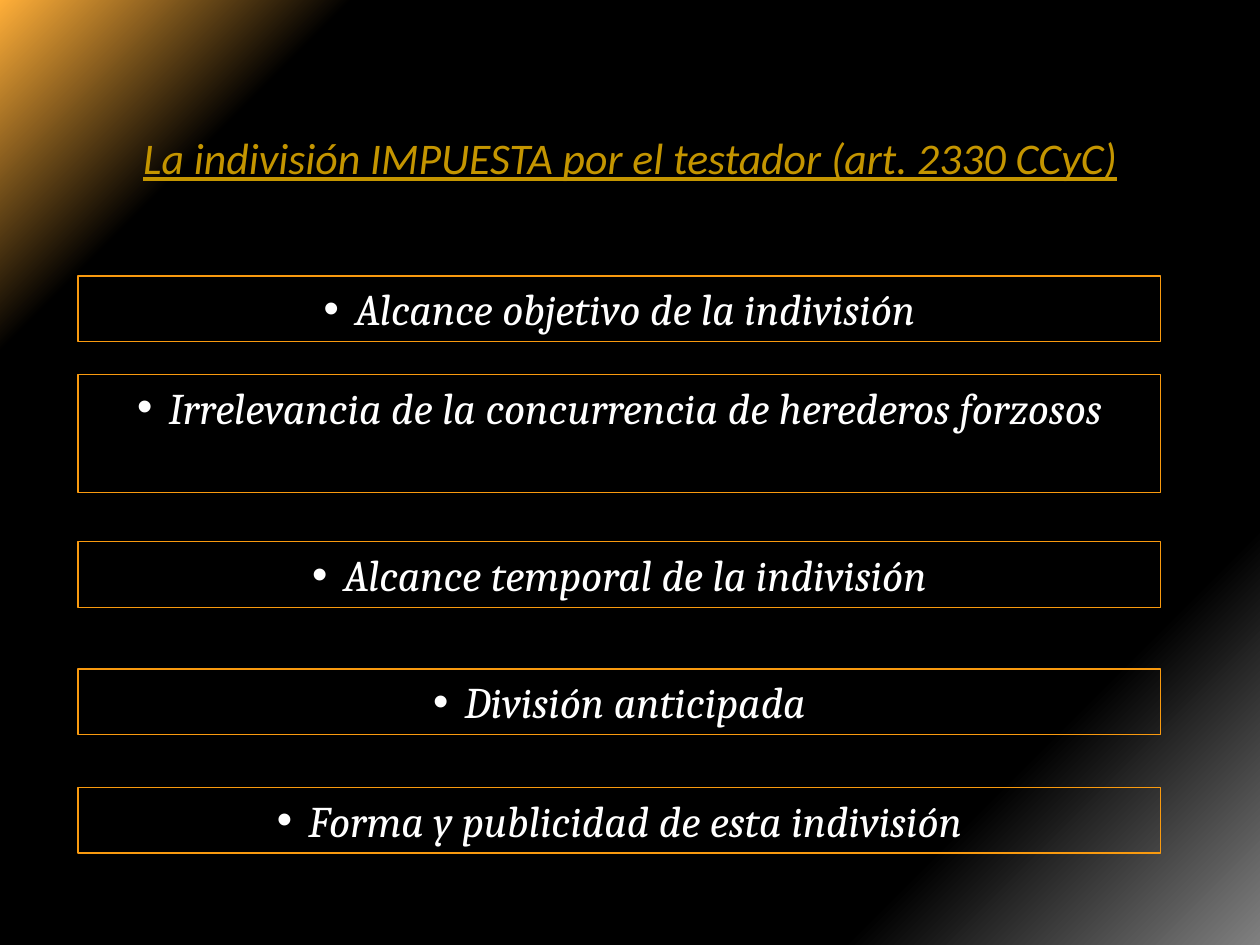
from dataclasses import dataclass

from lxml import etree
from pptx import Presentation
from pptx import util as u
from pptx.dml.color import RGBColor
from pptx.enum import shapes, text
from pptx.oxml.ns import qn


@dataclass(frozen=True)
class Theme:
    title_color: str = "C49500"
    text_color: str = "FFFFFF"
    line_color: str = "F99A0F"
    title_font: str = "Calibri"
    body_font: str = "Cambria"
    size: float = 25
    # Background stops: percent along the diagonal, colour
    stops: tuple = ((0, "FFAF39"), (16, "000000"), (81, "000000"), (100, "808080"))


@dataclass(frozen=True)
class Topic:
    label: str
    top: float
    height: float = 0.52


THEME = Theme()
WIDTH, HEIGHT = 10, 7.5
BOX_LEFT, BOX_WIDTH = 0.62, 8.59
BULLET_INDENT = 0.25

TITLE = "La indivisión IMPUESTA por el testador (art. 2330 CCyC)"
TOPICS = (
    Topic("Alcance objetivo de la indivisión", 2.19),
    Topic("Irrelevancia de la concurrencia de herederos forzosos", 2.97, 0.94),
    Topic("Alcance temporal de la indivisión", 4.3),
    Topic("División anticipada", 5.31),
    Topic("Forma y publicidad de esta indivisión", 6.25),
)


def paint_background(s) -> None:
    fill = s.background.fill
    fill.gradient()
    fill.gradient_angle = 315
    stop_list = next(s.element.iter(qn("a:gsLst")))
    for stop in list(stop_list):
        stop_list.remove(stop)
    for percent, color in THEME.stops:
        stop = etree.SubElement(stop_list, qn("a:gs"), pos=str(percent * 1000))
        etree.SubElement(stop, qn("a:srgbClr"), val=color)


def format_paragraph(p, font: str, color: str) -> None:
    p.alignment = text.PP_ALIGN.CENTER
    p.font.name = font
    p.font.size = u.Pt(THEME.size)
    p.font.italic = True
    p.font.color.rgb = RGBColor.from_string(color)


def add_bullet(p) -> None:
    indent = u.Inches(BULLET_INDENT)
    props = p._p.get_or_add_pPr()
    props.set("marL", str(indent))
    props.set("indent", str(-indent))
    bullet_font = etree.Element(qn("a:buFont"), typeface="Arial")
    bullet = etree.Element(qn("a:buChar"), char="•")
    props.insert(0, bullet_font)
    props.insert(1, bullet)


def add_title(s) -> None:
    sp = s.shapes.title
    sp.left, sp.top = u.Inches(0.5), u.Inches(0.3)
    sp.width, sp.height = u.Inches(WIDTH - 1), u.Inches(1.89)
    tf = sp.text_frame
    tf.text = TITLE
    tf.vertical_anchor = text.MSO_ANCHOR.MIDDLE
    p = tf.paragraphs[0]
    format_paragraph(p, THEME.title_font, THEME.title_color)
    p.font.underline = True


def add_topic(s, topic: Topic) -> None:
    sp = s.shapes.add_shape(
        shapes.MSO_SHAPE.RECTANGLE, u.Inches(BOX_LEFT), u.Inches(topic.top),
        u.Inches(BOX_WIDTH), u.Inches(topic.height))
    sp.shadow.inherit = False
    sp.fill.background()
    sp.line.color.rgb = RGBColor.from_string(THEME.line_color)
    sp.line.width = u.Pt(0.75)
    tf = sp.text_frame
    tf.word_wrap = True
    tf.vertical_anchor = text.MSO_ANCHOR.TOP
    tf.text = topic.label
    p = tf.paragraphs[0]
    format_paragraph(p, THEME.body_font, THEME.text_color)
    add_bullet(p)


def main() -> None:
    prs = Presentation()
    prs.slide_width, prs.slide_height = u.Inches(WIDTH), u.Inches(HEIGHT)
    s = prs.slides.add_slide(prs.slide_layouts.get_by_name("Title Only"))
    paint_background(s)
    add_title(s)
    # Framed topics
    for topic in TOPICS:
        add_topic(s, topic)
    prs.save("out.pptx")


if __name__ == "__main__":
    main()
